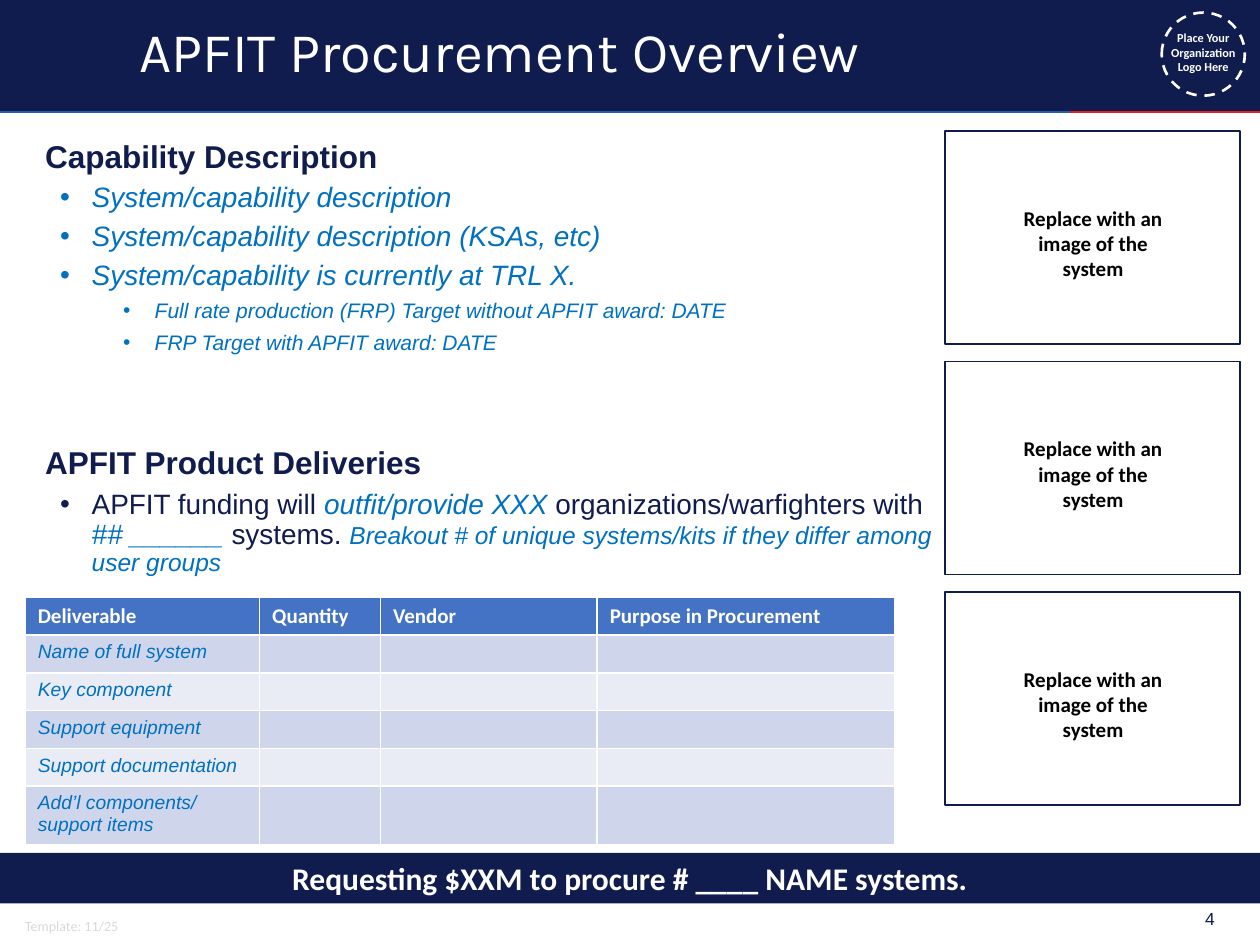
from dataclasses import dataclass

from lxml import etree
from pptx import Presentation
from pptx.dml.color import RGBColor
from pptx.enum import dml, shapes, text
from pptx.oxml.ns import qn
from pptx.util import Inches, Pt

NAVY = RGBColor(0x11, 0x1C, 0x4E)
BLUE = RGBColor(0x00, 0x70, 0xC0)
RULE_BLUE = RGBColor(0x26, 0x5C, 0xAA)
RULE_RED = RGBColor(0xE2, 0x1E, 0x26)
WHITE = RGBColor(0xFF, 0xFF, 0xFF)
BLACK = RGBColor(0x00, 0x00, 0x00)
PALE_GREY = RGBColor(0xD9, 0xD9, 0xD9)
HEADER_FILL = RGBColor(0x44, 0x72, 0xC4)
BAND_FILLS = (RGBColor(0xCF, 0xD5, 0xEA), RGBColor(0xE9, 0xEB, 0xF5))
LEFT, CENTER, RIGHT = text.PP_ALIGN.LEFT, text.PP_ALIGN.CENTER, text.PP_ALIGN.RIGHT


@dataclass(frozen=True)
class Style:
    size: float
    color: RGBColor
    font: str = "Arial"
    bold: bool = False
    italic: bool = False


@dataclass(frozen=True)
class Line:
    """One body paragraph: its (text, style) spans, spacing and bullet indent."""
    spans: tuple
    before: float = 5
    indent: float = 0


HEADING = Style(18, NAVY, bold=True)
PLAIN = Style(16, NAVY)
PROMPT = Style(16, BLUE, italic=True)
SUB_PROMPT = Style(12, BLUE, italic=True)
SMALL_PROMPT = Style(14, BLUE, italic=True)
CELL = Style(11, BLUE, italic=True)
CELL_HEADER = Style(12, WHITE, "Calibri", bold=True)
BANNER = Style(18, WHITE, "Calibri", bold=True)

BODY = (
    Line((("Capability Description", HEADING),), before=0),
    Line((("System/capability description", PROMPT),), indent=0.37),
    Line((("System/capability description (KSAs, etc)", PROMPT),), indent=0.37),
    Line((("System/capability is currently at TRL X.", PROMPT),), indent=0.37),
    Line((("Full rate production (FRP) Target without APFIT award: DATE", SUB_PROMPT),), indent=0.87),
    Line((("FRP Target with APFIT award: DATE", SUB_PROMPT),), indent=0.87),
    Line((("APFIT Product Deliveries", HEADING),), before=53),
    Line((
        ("APFIT funding will ", PLAIN),
        ("outfit/provide XXX ", PROMPT),
        ("organizations/warfighters with ", PLAIN),
        ("## ______ ", PROMPT),
        ("systems. ", PLAIN),
        ("Breakout # of unique systems/kits if they differ among user groups", SMALL_PROMPT),
    ), indent=0.37),
)
COLUMNS = (("Deliverable", 1.86), ("Quantity", 0.96), ("Vendor", 1.72), ("Purpose in Procurement", 2.36))
DELIVERABLES = ("Name of full system", "Key component", "Support equipment",
                "Support documentation", "Add’l components/ support items")


def add_span(para, words: str, style: Style) -> None:
    span = para.add_run()
    span.text = words
    font = span.font
    font.size, font.name = Pt(style.size), style.font
    font.bold, font.italic = style.bold, style.italic
    font.color.rgb = style.color


def add_label(slide, at: tuple, words: str, style: Style, align=LEFT,
              anchor=text.MSO_ANCHOR.TOP) -> None:
    frame = slide.shapes.add_textbox(*map(Inches, at)).text_frame
    frame.word_wrap = True
    frame.vertical_anchor = anchor
    para = frame.paragraphs[0]
    para.alignment = align
    add_span(para, words, style)


def add_box(slide, kind, at: tuple, fill=None, line=None, width: float = 1):
    box = slide.shapes.add_shape(kind, *map(Inches, at))
    box.shadow.inherit = False
    if fill is None:
        box.fill.background()
    else:
        box.fill.solid()
        box.fill.fore_color.rgb = fill
    if line is None:
        box.line.fill.background()
    else:
        box.line.color.rgb = line
        box.line.width = Pt(width)
    return box


def add_rule(slide, start: float, end: float, y: float, color: RGBColor) -> None:
    rule = slide.shapes.add_connector(shapes.MSO_CONNECTOR.STRAIGHT,
                                      Inches(start), Inches(y), Inches(end), Inches(y))
    rule.line.color.rgb = color
    rule.line.width = Pt(1)
    etree.SubElement(rule._element.spPr, qn("a:effectLst"))


def add_bullet(para, indent: float) -> None:
    """Hang a bullet a quarter inch left of the indent."""
    props = para._p.get_or_add_pPr()
    props.set("marL", str(Inches(indent)))
    props.set("indent", str(Inches(-0.25)))
    etree.SubElement(props, qn("a:buFont"), typeface="Arial")
    etree.SubElement(props, qn("a:buChar"), char="•")


def add_body(slide) -> None:
    frame = slide.shapes.add_textbox(Inches(0.26), Inches(1.07), Inches(7.24), Inches(3.61)).text_frame
    frame.word_wrap = True
    for number, line in enumerate(BODY):
        para = frame.add_paragraph() if number else frame.paragraphs[0]
        para.line_spacing = 0.9
        para.space_before = Pt(line.before)
        if line.indent:
            add_bullet(para, line.indent)
        for words, style in line.spans:
            add_span(para, words, style)


def add_deliverables(slide) -> None:
    rows = [[name for name, _ in COLUMNS]]
    rows += [[name, "", "", ""] for name in DELIVERABLES]
    table = slide.shapes.add_table(len(rows), len(COLUMNS), Inches(0.2), Inches(4.74),
                                   Inches(6.9), Inches(0.3 * len(rows))).table
    for column, (_, width) in zip(table.columns, COLUMNS):
        column.width = Inches(width)
    for r, row in enumerate(rows):
        for c, words in enumerate(row):
            cell = table.cell(r, c)
            cell.fill.solid()
            cell.fill.fore_color.rgb = BAND_FILLS[(r - 1) % 2] if r else HEADER_FILL
            para = cell.text_frame.paragraphs[0]
            if words:
                add_span(para, words, CELL if r else CELL_HEADER)
            else:
                etree.SubElement(para._p, qn("a:endParaRPr"), sz="1100")


def add_title(slide) -> None:
    title = slide.shapes.title
    title.left, title.top, title.width, title.height = map(Inches, (1.01, 0.06, 7.57, 0.74))
    title.text_frame.vertical_anchor = text.MSO_ANCHOR.MIDDLE
    para = title.text_frame.paragraphs[0]
    para.alignment = LEFT
    para.line_spacing = 0.9
    add_span(para, "APFIT Procurement Overview", Style(32, WHITE, "Karla"))
    slide.shapes._spTree.append(title._element)  # in front of the header bar


def main() -> None:
    deck = Presentation()
    deck.slide_width, deck.slide_height = Inches(10), Inches(7.5)
    page = deck.slides.add_slide(deck.slide_layouts[5])
    rect, oval = shapes.MSO_SHAPE.RECTANGLE, shapes.MSO_SHAPE.OVAL

    add_box(page, rect, (0, 0, 10, 0.89), fill=NAVY)
    add_rule(page, 0, 8.49, 0.89, RULE_BLUE)
    add_rule(page, 10, 8.49, 0.89, RULE_RED)
    add_label(page, (0.1, 7.23, 0.98, 0.24), "Template: 11/25", Style(8, PALE_GREY, "Calibri"))
    circle = add_box(page, oval, (9.22, 0.1, 0.66, 0.66), line=WHITE, width=1.5)
    circle.line.dash_style = dml.MSO_LINE.DASH
    add_label(page, (9.17, 0.19, 0.76, 0.45), "Place Your Organization Logo Here",
              Style(7, WHITE, "Calibri", bold=True), CENTER)

    add_body(page)
    add_title(page)
    add_label(page, (8.49, 7.09, 1.25, 0.4), "4", Style(10, NAVY), RIGHT, text.MSO_ANCHOR.MIDDLE)
    add_deliverables(page)

    for number in range(3):
        top = 1.04 + 1.83 * number
        add_box(page, rect, (7.5, top, 2.34, 1.69), line=NAVY)
        add_label(page, (7.92, top + 0.54, 1.51, 0.71), "Replace with an image of the system",
                  Style(12, BLACK, "Calibri", bold=True), CENTER)

    banner = add_box(page, rect, (0, 6.77, 10, 0.4), fill=NAVY)
    para = banner.text_frame.paragraphs[0]
    para.alignment = CENTER
    add_span(para, "Requesting $XXM to procure # ____ NAME systems.", BANNER)

    deck.save("out.pptx")


if __name__ == "__main__":
    main()
